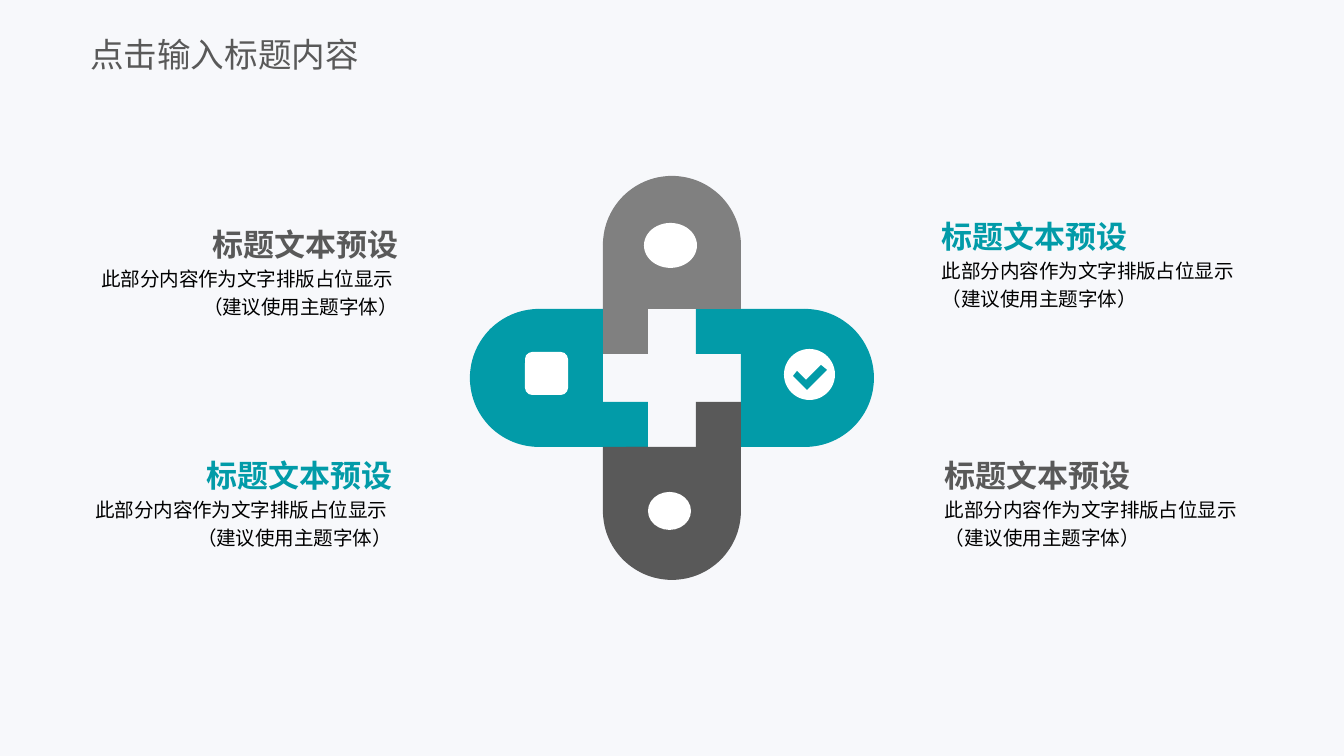
import math

from lxml import etree
from pptx import Presentation
from pptx import util as u
from pptx.dml.color import RGBColor
from pptx.enum import shapes, text
from pptx.oxml.ns import qn

EMU_PER_PX = 914400 / 134.4
FONT = "Noto Sans CJK SC"
COLOURS = {
    "background": "F7F8FB",
    "teal": "029BA8",
    "grey": "808080",
    "dark": "595959",
    "black": "000000",
    "white": "FFFFFF",
}
HEADING = "标题文本预设"
BODY = "此部分内容作为文字排版占位显示 \v（建议使用主题字体）"

CENTRE = (672, 378)
OUTER, INNER = 69, 24  # half widths of an arm and of the cross-shaped gap
RING_CENTRE = 133

# quarter turns from the right-hand arm, colour, block length, block breadth
ARMS = [
    (0, "teal", 92, 101),
    (1, "grey", 101, 92),
    (2, "teal", 92, 101),
    (3, "dark", 101, 92),
]
# left, top, width, heading colour, alignment
CAPTIONS = [
    (942, 218, 320, "teal", text.PP_ALIGN.LEFT),
    (945, 457, 320, "dark", text.PP_ALIGN.LEFT),
    (78, 226, 320, "dark", text.PP_ALIGN.RIGHT),
    (78, 457, 314, "teal", text.PP_ALIGN.RIGHT),
]
ICONS = [
    (shapes.MSO_SHAPE.ROUNDED_RECTANGLE, 525, 352, 43, 43),
    (shapes.MSO_SHAPE.OVAL, 644, 223, 53, 45),
    (shapes.MSO_SHAPE.OVAL, 648, 492, 43, 38),
    (shapes.MSO_SHAPE.OVAL, 784, 349, 51, 51),
]
CHECK_MARK = [(793, 376), (797, 371), (806, 380), (821, 365), (827, 370), (807, 390)]


def px(value):
    return u.Emu(round(value * EMU_PER_PX))


def colour(name):
    return RGBColor.from_string(COLOURS[name])


def paint(shape, fill):
    shape.shadow.inherit = False
    shape.fill.solid()
    shape.fill.fore_color.rgb = colour(fill)
    shape.line.fill.background()


def add_preset(slide, kind, left, top, width, height, fill):
    shape = slide.shapes.add_shape(kind, px(left), px(top), px(width), px(height))
    paint(shape, fill)


def add_outline(slide, points, fill):
    start, *rest = [(px(x), px(y)) for x, y in points]
    builder = slide.shapes.build_freeform(*start)
    builder.add_line_segments(rest, close=True)
    paint(builder.convert_to_shape(), fill)


def turn(point, quarters):
    """Turn a point anticlockwise about the centre and place it on the slide."""
    x, y = point
    for _ in range(quarters):
        x, y = y, -x
    return CENTRE[0] + x, CENTRE[1] + y


def half_ring():
    angles = [math.radians(degrees) for degrees in range(-90, 91, 3)]

    def arc(radius, steps):
        return [(RING_CENTRE + radius * math.cos(a), radius * math.sin(a)) for a in steps]

    return arc(OUTER, angles) + arc(INNER, reversed(angles))


def add_arm(slide, quarters, fill, length, breadth):
    add_outline(slide, [turn(point, quarters) for point in half_ring()], fill)
    bars = [
        (INNER, -OUTER, RING_CENTRE, -INNER),
        (OUTER, INNER, RING_CENTRE, OUTER),
        (OUTER, -breadth / 2, OUTER + length, breadth / 2),
    ]
    for x1, y1, x2, y2 in bars:
        (ax, ay), (bx, by) = turn((x1, y1), quarters), turn((x2, y2), quarters)
        add_preset(slide, shapes.MSO_SHAPE.RECTANGLE, min(ax, bx), min(ay, by),
                   abs(bx - ax), abs(by - ay), fill)


def write(shape, content, size, fill, align, anchor, bold=False, wrap=True,
          spacing=1.0, margin=0):
    frame = shape.text_frame
    frame.text = content
    frame.word_wrap = wrap
    frame.auto_size = text.MSO_AUTO_SIZE.NONE
    frame.vertical_anchor = anchor
    frame.margin_left = frame.margin_right = 0
    frame.margin_top = frame.margin_bottom = px(margin)
    paragraph = frame.paragraphs[0]
    paragraph.alignment = align
    paragraph.line_spacing = spacing
    for run in paragraph.runs:
        run.font.size = u.Pt(size)
        run.font.bold = bold
        run.font.color.rgb = colour(fill)
        run.font.name = FONT
        east_asian = etree.SubElement(run._r.get_or_add_rPr(), qn("a:ea"))
        east_asian.set("typeface", FONT)


def add_caption(slide, left, top, width, fill, align):
    heading = slide.shapes.add_textbox(px(left), px(top), px(width), px(31))
    write(heading, HEADING, 16.6, fill, align, text.MSO_ANCHOR.TOP, bold=True, wrap=False)
    body = slide.shapes.add_textbox(px(left), px(top + 31), px(width), px(67))
    write(body, BODY, 10.5, "black", align, text.MSO_ANCHOR.MIDDLE, spacing=1.2)


def set_title(slide, content):
    title = slide.shapes.title
    title.left, title.top, title.width, title.height = px(90), px(26), px(313), px(56)
    write(title, content, 18, "dark", text.PP_ALIGN.LEFT, text.MSO_ANCHOR.MIDDLE, margin=7)


def main():
    presentation = Presentation()
    presentation.slide_width, presentation.slide_height = px(1344), px(756)
    slide = presentation.slides.add_slide(presentation.slide_layouts[5])
    slide.background.fill.solid()
    slide.background.fill.fore_color.rgb = colour("background")

    set_title(slide, "点击输入标题内容")
    for arm in ARMS:
        add_arm(slide, *arm)
    for icon in ICONS:
        add_preset(slide, *icon, "white")
    add_outline(slide, CHECK_MARK, "teal")
    for caption in CAPTIONS:
        add_caption(slide, *caption)
    presentation.save("out.pptx")


if __name__ == "__main__":
    main()
